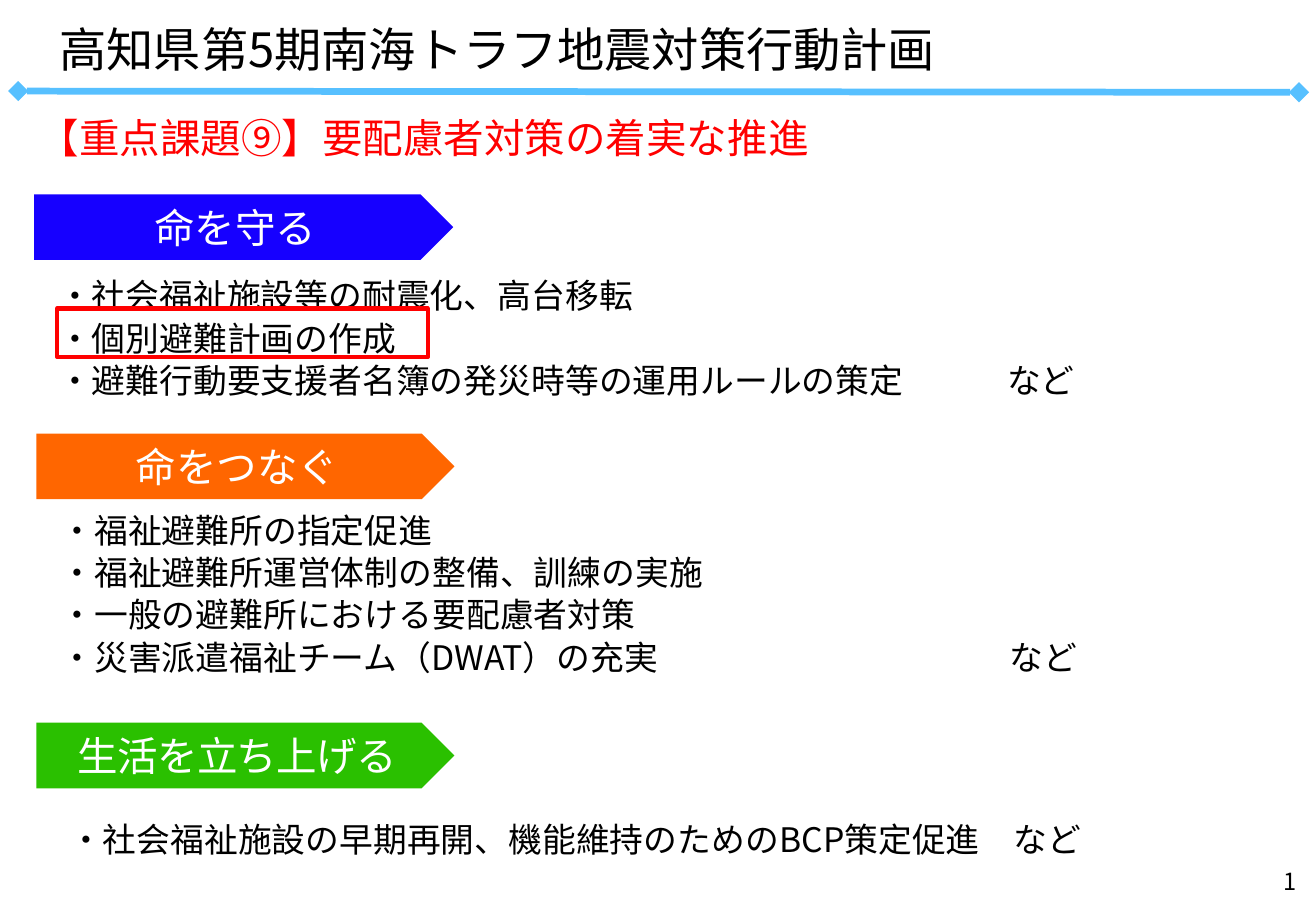
from lxml import etree
from pptx import Presentation
from pptx.dml.color import RGBColor
from pptx.enum.shapes import MSO_CONNECTOR, MSO_SHAPE
from pptx.enum.text import MSO_ANCHOR, MSO_AUTO_SIZE, PP_ALIGN
from pptx.oxml.ns import qn
from pptx.util import Pt

PX = 9144
FONT = "Noto Sans CJK JP"
BLACK = RGBColor(0x00, 0x00, 0x00)
WHITE = RGBColor(0xFF, 0xFF, 0xFF)
RED = RGBColor(0xFF, 0x00, 0x00)
BLUE = RGBColor(0x16, 0x00, 0xFF)
ORANGE = RGBColor(0xFF, 0x66, 0x00)
GREEN = RGBColor(0x2A, 0xC0, 0x00)
SKY = RGBColor(0x57, 0xC0, 0xFF)

LEFT, CENTER, RIGHT = PP_ALIGN.LEFT, PP_ALIGN.CENTER, PP_ALIGN.RIGHT
TOP, MIDDLE = MSO_ANCHOR.TOP, MSO_ANCHOR.MIDDLE
FIT_SHAPE, NO_FIT = MSO_AUTO_SIZE.SHAPE_TO_FIT_TEXT, MSO_AUTO_SIZE.NONE
PENTAGON, RECTANGLE = MSO_SHAPE.PENTAGON, MSO_SHAPE.RECTANGLE
STRAIGHT = MSO_CONNECTOR.STRAIGHT

SECTIONS = [
    ("命を守る", BLUE, (28, 160, 345, 54), 0, (38, 221, 1017, 114), [
        "・社会福祉施設等の耐震化、高台移転",
        "・個別避難計画の作成",
        "・避難行動要支援者名簿の発災時等の運用ルールの策定\tなど",
    ]),
    ("命をつなぐ", ORANGE, (30, 357, 344, 54), 0, (40, 414, 1016, 149), [
        "・福祉避難所の指定促進",
        "・福祉避難所運営体制の整備、訓練の実施",
        "・一般の避難所における要配慮者対策",
        "・災害派遣福祉チーム（DWAT）の充実\tなど",
    ]),
    ("生活を立ち上げる", GREEN, (30, 595, 344, 54), -40, (47, 669, 1004, 44), [
        "・社会福祉施設の早期再開、機能維持のためのBCP策定促進　など",
    ]),
]
ETC_TAB = 781


def px(*values):
    return [v * PX for v in values]


def set_text(sp, lines, size, color, align=LEFT, anchor=TOP, fit=NO_FIT):
    tf = sp.text_frame
    tf.text = "\n".join(lines)
    tf.word_wrap = True
    tf.auto_size = fit
    tf.vertical_anchor = anchor
    for p in tf.paragraphs:
        p.alignment = align
        for r in p.runs:
            r.font.size = Pt(size)
            r.font.color.rgb = color
            r.font.name = FONT
            etree.SubElement(r.font._element, qn("a:ea"), typeface=FONT)
    return tf


def add_text(slide, box, *args, **kwargs):
    sp = slide.shapes.add_textbox(*px(*box))
    return set_text(sp, *args, **kwargs)


def add_title(slide, text):
    sp = slide.shapes.title
    sp.left, sp.top, sp.width, sp.height = px(0, 12, 1083, 48)
    tf = set_text(sp, [text], 28, BLACK)
    tf.margin_left = 49 * PX


def add_rule(slide, start, end):
    line = slide.shapes.add_connector(STRAIGHT, *px(*start, *end))
    line.line.color.rgb = SKY
    line.line.width = Pt(4)
    ln = line.line._get_or_add_ln()
    for tag in ("a:headEnd", "a:tailEnd"):
        etree.SubElement(ln, qn(tag), type="diamond")
    etree.SubElement(line._element.spPr, qn("a:effectLst"))


def add_banner(slide, text, color, box, spacing):
    sp = slide.shapes.add_shape(PENTAGON, *px(*box))
    sp.shadow.inherit = False
    sp.fill.solid()
    sp.fill.fore_color.rgb = color
    sp.line.fill.background()
    tf = set_text(sp, [text], 24, WHITE, CENTER, MIDDLE)
    tf.margin_left = tf.margin_right = 8 * PX
    tf.margin_top = tf.margin_bottom = 0
    if spacing:
        tf.paragraphs[0].runs[0].font._element.set("spc", str(spacing))


def add_items(slide, box, lines):
    tf = add_text(slide, box, lines, 20, BLACK, anchor=MIDDLE, fit=FIT_SHAPE)
    for p in tf.paragraphs:
        p.space_after = Pt(1)
        if "\t" in p.text:
            tabs = etree.SubElement(p._p.get_or_add_pPr(), qn("a:tabLst"))
            etree.SubElement(tabs, qn("a:tab"), pos=str(ETC_TAB * PX), algn="l")


def add_highlight(slide, box):
    sp = slide.shapes.add_shape(RECTANGLE, *px(*box))
    sp.shadow.inherit = False
    sp.fill.background()
    sp.line.color.rgb = RED
    sp.line.width = Pt(2.5)


def main():
    prs = Presentation()
    prs.slide_width, prs.slide_height = px(1083, 750)
    slide = prs.slides.add_slide(prs.slide_layouts[5])

    add_title(slide, "高知県第5期南海トラフ地震対策行動計画")
    tf = add_text(slide, (28, 88, 1008, 50),
                  ["【重点課題⑨】要配慮者対策の着実な推進"], 24, RED, fit=FIT_SHAPE)
    tf.margin_left = tf.margin_right = 4 * PX
    for heading, color, banner_box, spacing, items_box, items in SECTIONS:
        add_banner(slide, heading, color, banner_box, spacing)
        add_items(slide, items_box, items)
    add_highlight(slide, (47, 254, 305, 40))
    add_rule(slide, (15, 75), (1069, 76))
    add_text(slide, (850, 705, 227, 40), ["1"], 14, BLACK, RIGHT, MIDDLE)

    prs.save("out.pptx")


if __name__ == "__main__":
    main()
